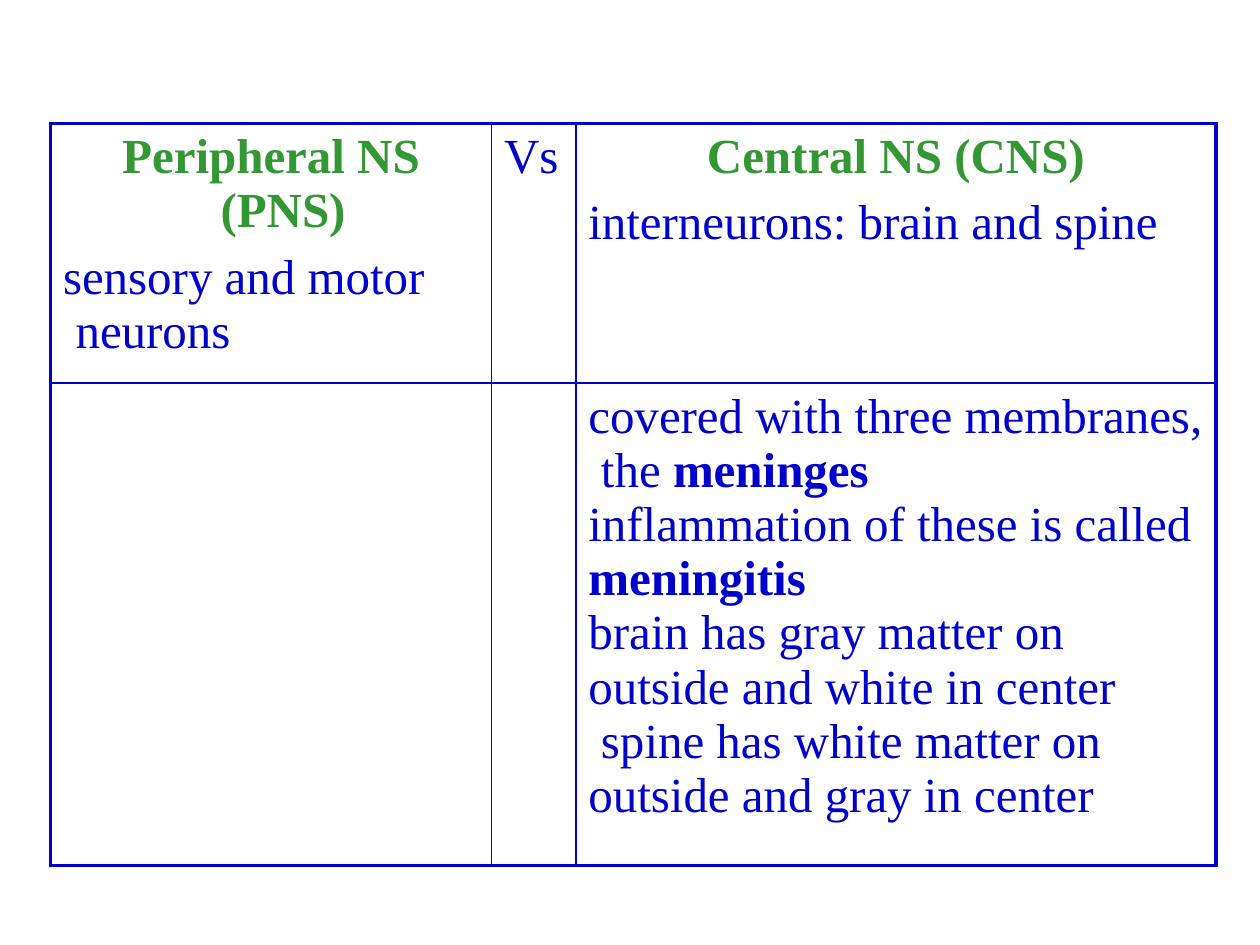
from lxml import etree
from pptx import Presentation
from pptx import util as u
from pptx.dml.color import RGBColor
from pptx.enum import text
from pptx.oxml.ns import qn

BLUE, GREEN = "0000CC", "339833"
OUTER, INNER = 2.25, 1


def rgb(hex_color):
    return RGBColor.from_string(hex_color)


class ComparisonSlide:
    font = {"name": "Times New Roman", "size": u.Pt(28)}
    insets = {"margin_left": 0, "margin_right": 0,
              "margin_top": u.Inches(0.05), "margin_bottom": 0}

    def __init__(self, prs):
        self.slide = prs.slides.add_slide(prs.slide_layouts[6])

    def add_table(self, left, top, widths, heights):
        frame = self.slide.shapes.add_table(
            len(heights), len(widths), u.Inches(left), u.Inches(top),
            u.Inches(sum(widths)), u.Inches(sum(heights)))
        table = frame.table
        table.first_row = table.horz_banding = False
        for column, width in zip(table.columns, widths):
            column.width = u.Inches(width)
        for row, height in zip(table.rows, heights):
            row.height = u.Inches(height)
        last_row, last_col = len(heights) - 1, len(widths) - 1
        for r, row in enumerate(table.rows):
            for c, cell in enumerate(row.cells):
                for key, value in self.insets.items():
                    setattr(cell, key, value)
                on_edge = {"lnL": c == 0, "lnR": c == last_col,
                           "lnT": r == 0, "lnB": r == last_row}
                self.add_borders(cell, on_edge)
                cell.fill.background()
        return table

    def add_borders(self, cell, on_edge):
        properties = cell._tc.get_or_add_tcPr()
        for side, outer in on_edge.items():
            line = etree.SubElement(properties, qn(f"a:{side}"),
                                    w=str(u.Pt(OUTER if outer else INNER)))
            fill = etree.SubElement(line, qn("a:solidFill"))
            etree.SubElement(fill, qn("a:srgbClr"), val=BLUE)

    def fill_cell(self, cell, paragraphs):
        """Fill a cell from (runs, format) pairs; a run is (words, bold)."""
        frame = cell.text_frame
        for i, (runs, look) in enumerate(paragraphs):
            p = frame.paragraphs[0] if i == 0 else frame.add_paragraph()
            p.alignment = look.get("align", text.PP_ALIGN.LEFT)
            if i > 0:
                p.space_before = u.Pt(look.get("before", 0))
            margin, indent = look.get("indent", (0.1, 0))
            properties = p._p.get_or_add_pPr()
            properties.set("marL", str(u.Inches(margin)))
            properties.set("indent", str(u.Inches(indent)))
            for words, bold in runs:
                run = p.add_run()
                run.text = words
                for key, value in {**self.font, "bold": bold}.items():
                    setattr(run.font, key, value)
                run.font.color.rgb = rgb(look.get("color", BLUE))


def main():
    prs = Presentation()
    prs.slide_width, prs.slide_height = u.Inches(10), u.Inches(7.5)
    page = ComparisonSlide(prs)
    table = page.add_table(0.4, 0.98, [3.5, 0.67, 5.08], [2.06, 3.83])

    hanging = (0.2, -0.1)
    page.fill_cell(table.cell(0, 0), [
        ([("Peripheral NS (PNS)", True)],
         {"color": GREEN, "indent": (1.35, -0.78)}),
        ([("sensory and motor neurons", False)],
         {"indent": hanging, "before": 7}),
    ])
    page.fill_cell(table.cell(0, 1), [([("Vs", False)], {})])
    page.fill_cell(table.cell(0, 2), [
        ([("Central NS (CNS)", True)],
         {"color": GREEN, "indent": (0, 0), "align": text.PP_ALIGN.CENTER}),
        ([("interneurons: brain and spine", False)], {"before": 7}),
    ])
    details = table.cell(1, 2)
    details.margin_right = u.Inches(0.05)
    page.fill_cell(details, [
        ([("covered with three membranes, the ", False), ("meninges", True)],
         {"indent": hanging}),
        ([("inflammation of these is called", False)], {}),
        ([("meningitis", True)], {}),
        ([("brain has gray matter on outside and white in center", False)], {}),
        ([("spine has white matter on outside and gray in center", False)],
         {"indent": (0.1, 0.1)}),
    ])
    prs.save("out.pptx")


if __name__ == "__main__":
    main()
